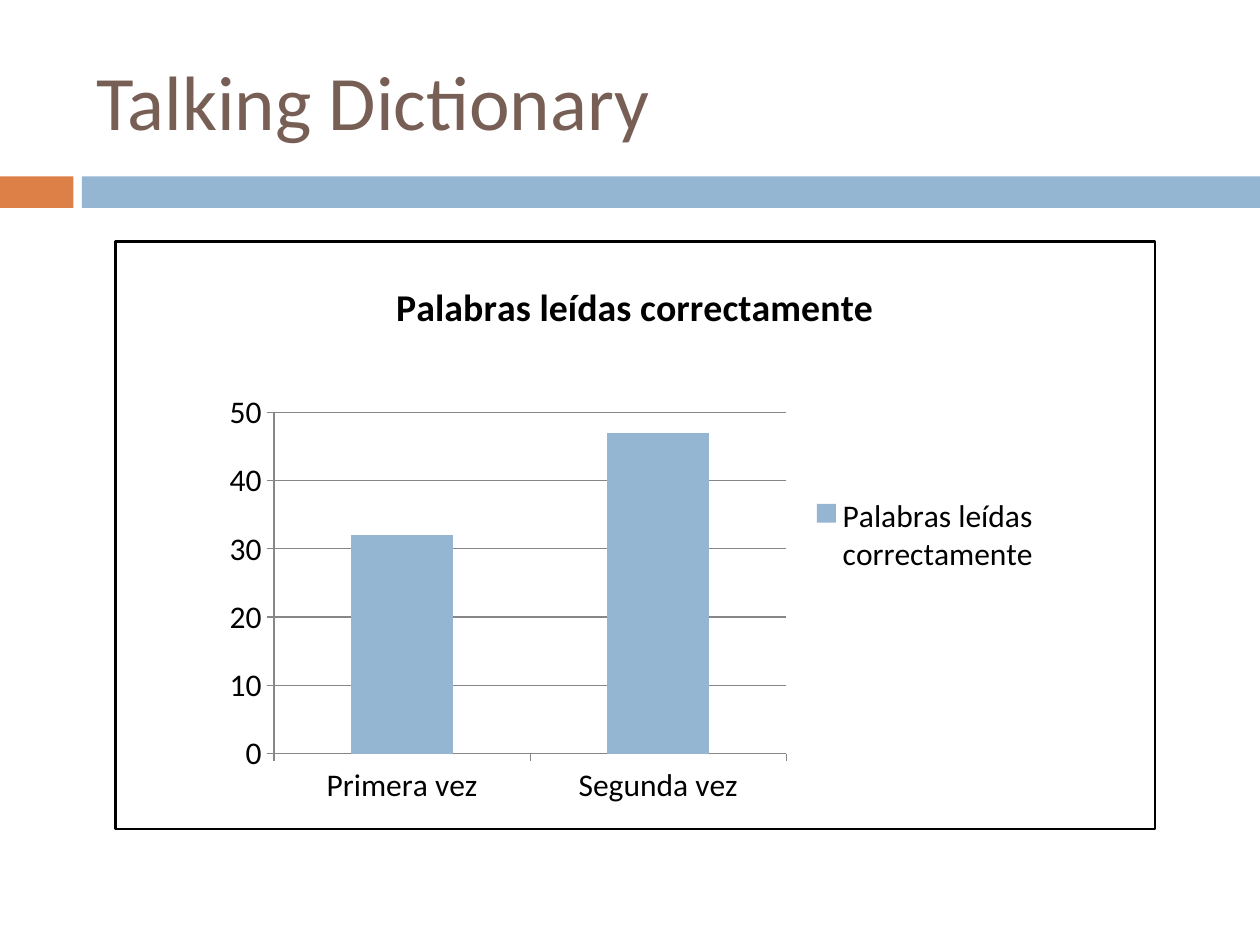
"""Build the Talking Dictionary slide with its reading results chart."""
from dataclasses import dataclass
from typing import Optional

from lxml import etree
from pptx import Presentation
from pptx import util as u
from pptx.chart import data as chart_data
from pptx.dml.color import RGBColor
from pptx.enum import chart as charts, shapes, text
from pptx.oxml import ns

ORANGE = RGBColor(0xDD, 0x80, 0x47)
BLUE = RGBColor(0x94, 0xB6, 0xD2)
BROWN = RGBColor(0x77, 0x5F, 0x55)
BLACK = RGBColor(0, 0, 0)
GRAY = RGBColor(0x87, 0x87, 0x87)
FONT = "Calibri"
MEASURE = "Palabras leídas correctamente"


@dataclass(frozen=True)
class Box:
    left: float
    top: float
    width: float
    height: float
    fill: Optional[RGBColor] = None
    line: Optional[RGBColor] = None

    def lengths(self) -> tuple:
        return tuple(u.Pt(value) for value in (self.left, self.top, self.width, self.height))


RECTANGLES = (
    Box(0, 100.8, 42, 18, fill=ORANGE),
    Box(46.8, 100.8, 673.2, 18, fill=BLUE),
    Box(66, 138.2, 594, 335.5, line=BLACK),
)
TITLE = Box(48, 18, 642, 78)
CHART = Box(123, 146.2, 480, 319.7)
PLOT_SHARE = Box(0.07, 0.28, 0.61, 0.61)
LEGEND_SHARE = Box(0.71, 0.4, 0.27, 0.2)


def style_font(font, size: float, color: RGBColor, bold: bool = False) -> None:
    font.name = FONT
    font.size = u.Pt(size)
    font.bold = bold
    font.color.rgb = color


def draw_rectangle(slide, box: Box) -> None:
    shape = slide.shapes.add_shape(shapes.MSO_SHAPE.RECTANGLE, *box.lengths())
    shape.shadow.inherit = False
    if box.fill is None:
        shape.fill.background()
    else:
        shape.fill.solid()
        shape.fill.fore_color.rgb = box.fill
    if box.line is None:
        shape.line.fill.background()
    else:
        shape.line.color.rgb = box.line
        shape.line.width = u.Pt(1.5)


def draw_title(slide, box: Box) -> None:
    frame = slide.shapes.add_textbox(*box.lengths()).text_frame
    frame.word_wrap = True
    frame.vertical_anchor = text.MSO_ANCHOR.MIDDLE
    frame.text = "Talking Dictionary"
    style_font(frame.paragraphs[0].runs[0].font, 44, BROWN)


def place_part(part, share: Box, index: int, inner: bool = False) -> None:
    """Give a chart part a fixed place as shares of the chart's size."""
    for old_layout in part.findall(ns.qn("c:layout")):
        part.remove(old_layout)
    layout = etree.Element(ns.qn("c:layout"))
    manual = etree.SubElement(layout, ns.qn("c:manualLayout"))
    settings = [("layoutTarget", "inner")] if inner else []
    settings += [("xMode", "edge"), ("yMode", "edge"), ("x", share.left),
                 ("y", share.top), ("w", share.width), ("h", share.height)]
    for name, value in settings:
        etree.SubElement(manual, ns.qn(f"c:{name}")).set("val", str(value))
    part.insert(index, layout)


def draw_chart(slide, box: Box) -> None:
    results = chart_data.CategoryChartData()
    results.categories = ["Primera vez", "Segunda vez"]
    results.add_series(MEASURE, (32, 47))
    chart = slide.shapes.add_chart(
        charts.XL_CHART_TYPE.COLUMN_CLUSTERED, *box.lengths(), results).chart
    style_font(chart.font, 18, BLACK)

    chart.has_title = True
    title = chart.chart_title.text_frame
    title.text = MEASURE
    style_font(title.paragraphs[0].runs[0].font, 21.6, BLACK, bold=True)

    chart.has_legend = True
    chart.legend.position = charts.XL_LEGEND_POSITION.RIGHT
    chart.legend.include_in_layout = False

    plot = chart.plots[0]
    plot.gap_width = 150
    plot.vary_by_categories = False
    series_fill = plot.series[0].format.fill
    series_fill.solid()
    series_fill.fore_color.rgb = BLUE

    values = chart.value_axis
    values.minimum_scale, values.maximum_scale, values.major_unit = 0, 50, 10
    values.has_major_gridlines = True
    for axis in (values, chart.category_axis):
        axis.major_tick_mark = charts.XL_TICK_MARK.OUTSIDE
    for line in (values.format.line, chart.category_axis.format.line,
                 values.major_gridlines.format.line):
        line.color.rgb = GRAY
        line.width = u.Pt(0.75)

    root = chart.element if hasattr(chart, "element") else chart._chartSpace
    place_part(root.find(f".//{ns.qn('c:plotArea')}"), PLOT_SHARE, 0, inner=True)
    place_part(root.find(f".//{ns.qn('c:legend')}"), LEGEND_SHARE, 1)


def main() -> None:
    presentation = Presentation()
    presentation.slide_width = u.Pt(720)
    presentation.slide_height = u.Pt(540)
    slide = presentation.slides.add_slide(presentation.slide_layouts[6])
    for box in RECTANGLES:
        draw_rectangle(slide, box)
    draw_title(slide, TITLE)
    draw_chart(slide, CHART)
    presentation.save("out.pptx")


if __name__ == "__main__":
    main()
